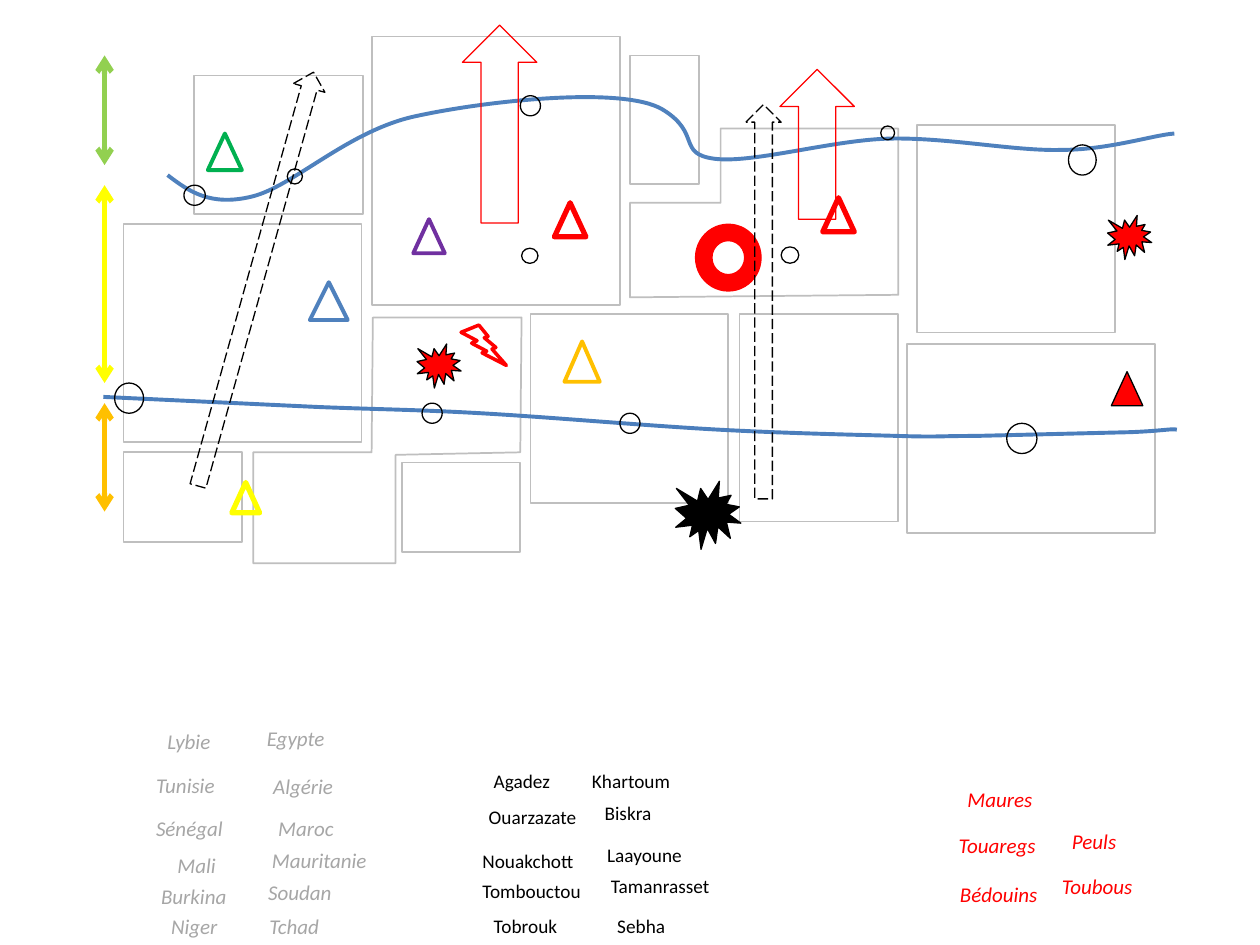
from pptx import Presentation
from pptx.dml.color import RGBColor
from pptx.enum import dml, shapes, text
from pptx.oxml.ns import qn
from pptx.util import Cm, Pt
from lxml import etree

GREY = RGBColor(0xBF, 0xBF, 0xBF)
ASH = RGBColor(0xA6, 0xA6, 0xA6)
RED = RGBColor(0xFF, 0, 0)
BLACK = RGBColor(0, 0, 0)
BLUE = RGBColor(0x4F, 0x81, 0xBD)
STEEL = RGBColor(0x4B, 0x7E, 0xBC)
GOLD = RGBColor(0xFF, 0xC0, 0)
YELLOW = RGBColor(0xFF, 0xFF, 0)
LIME = RGBColor(0x92, 0xD0, 0x50)
GREEN = RGBColor(0, 0xB0, 0x50)
PURPLE = RGBColor(0x70, 0x30, 0xA0)

UNIT = 2.54  # cm in one map unit; every place below is in map units
KIND = shapes.MSO_SHAPE

# left, top, width, height
LANDS = [
    (1.54, 0.6, 1.34, 1.1), (2.95, 0.29, 1.97, 2.13), (5, 0.44, 0.55, 1.02),
    (7.28, 0.99, 1.57, 1.65), (7.2, 2.73, 1.97, 1.5), (0.98, 1.78, 1.89, 1.73),
    (4.21, 2.49, 1.57, 1.5), (0.98, 3.59, 0.94, 0.71), (3.19, 3.67, 0.94, 0.71),
    (5.87, 2.49, 1.26, 1.65),
]
# corners
BENT = [
    [(5, 1.61), (5.72, 1.61), (5.72, 1.02), (7.13, 1.02), (7.13, 2.34), (5, 2.36)],
    [(2.01, 3.59), (2.01, 4.47), (3.14, 4.47), (3.14, 3.61), (4.13, 3.59),
     (4.14, 2.52), (2.96, 2.52), (2.95, 3.59)],
]
# box, colour, then steps: start, and per step an end point (straight)
# or two handles and an end point
BELTS = [
    ((1.33, 0.77, 7.99, 0.81), BLUE, [
        (1.33, 1.39), (1.5, 1.52, 1.67, 1.64, 2, 1.56), (2.33, 1.48, 2.77, 1.03, 3.31, 0.92),
        (3.86, 0.8, 4.95, 0.68, 5.26, 0.87), (5.57, 1.06, 5.37, 1.22, 5.67, 1.26),
        (5.97, 1.3, 6.61, 1.11, 7.06, 1.1), (7.52, 1.09, 8.05, 1.2, 8.42, 1.19),
        (8.8, 1.19, 9.16, 1.07, 9.32, 1.06)]),
    ((0.82, 3.15, 8.52, 0.32), STEEL, [
        (0.82, 3.15), (2.52, 3.23), (3.02, 3.25, 3.29, 3.25, 3.82, 3.28),
        (4.35, 3.31, 5.15, 3.38, 5.7, 3.41), (6.26, 3.44, 6.79, 3.45, 7.13, 3.46),
        (7.47, 3.47, 7.43, 3.46, 7.74, 3.46), (8.97, 3.43),
        (9.23, 3.42, 9.3, 3.4, 9.34, 3.41)]),
]
# top, bottom, colour
ZONES = [(3.2, 4.06, GOLD), (1.47, 3.04, YELLOW), (0.44, 1.31, LIME)]
ZONE_X = 0.83
TOWNS = [
    (0.91, 3.04, 0.23, 0.24), (3.35, 3.2, 0.16, 0.16), (4.92, 3.28, 0.16, 0.16),
    (7.99, 3.36, 0.24, 0.24), (1.46, 1.47, 0.17, 0.16), (2.28, 1.34, 0.12, 0.12),
    (4.13, 0.76, 0.16, 0.16), (6.99, 1, 0.11, 0.11), (8.48, 1.15, 0.22, 0.24),
    (4.14, 1.97, 0.13, 0.12), (6.2, 1.96, 0.14, 0.13),
]
# kind, box, format
SIGNS = [
    (KIND.ISOSCELES_TRIANGLE, (4.48, 2.71, 0.28, 0.32), dict(line=GOLD, width=2.25)),
    (KIND.ISOSCELES_TRIANGLE, (3.28, 1.74, 0.25, 0.27), dict(line=PURPLE, width=2.25)),
    (KIND.ISOSCELES_TRIANGLE, (4.4, 1.61, 0.25, 0.27), dict(line=RED, width=3)),
    (KIND.ISOSCELES_TRIANGLE, (6.53, 1.57, 0.25, 0.27), dict(line=RED, width=3)),
    (KIND.ISOSCELES_TRIANGLE, (8.82, 2.95, 0.25, 0.27), dict(line=BLACK, fill=RED)),
    (KIND.ISOSCELES_TRIANGLE, (2.46, 2.24, 0.3, 0.3), dict(line=BLUE, width=2.25)),
    (KIND.ISOSCELES_TRIANGLE, (1.65, 1.06, 0.27, 0.29), dict(line=GREEN, width=2.25)),
    (KIND.ISOSCELES_TRIANGLE, (1.84, 3.83, 0.22, 0.24), dict(line=YELLOW, width=3)),
    (KIND.UP_ARROW, (3.67, 0.2, 0.59, 1.57), dict(line=RED)),
    (KIND.UP_ARROW, (6.19, 0.55, 0.59, 1.19), dict(line=RED)),
    (KIND.EXPLOSION1, (8.79, 1.71, 0.35, 0.35), dict(line=BLACK, fill=RED)),
    (KIND.EXPLOSION1, (3.31, 2.73, 0.35, 0.35), dict(line=BLACK, fill=RED)),
    (KIND.EXPLOSION1, (5.36, 3.82, 0.52, 0.54), dict(line=BLACK, fill=BLACK)),
    (KIND.DONUT, (5.52, 1.78, 0.52, 0.53), dict(line=RED, fill=RED)),
    (KIND.UP_ARROW, (1.9, 0.51, 0.26, 3.41), dict(line=BLACK, dash=True, turn=15.6)),
    (KIND.UP_ARROW, (5.92, 0.83, 0.28, 3.13), dict(line=BLACK, dash=True)),
    (KIND.LIGHTNING_BOLT, (3.66, 2.58, 0.36, 0.32), dict(line=RED, width=2)),
]
# name, left, top, width
STATES = [
    ("Maroc", 2.11, 6.42, 0.64), ("Tunisie", 1.14, 6.08, 0.67),
    ("Lybie", 1.23, 5.73, 0.55), ("Mauritanie", 2.06, 6.68, 0.96),
    ("Sénégal", 1.14, 6.42, 0.73), ("Niger", 1.26, 7.2, 0.57),
    ("Tchad", 2.04, 7.2, 0.6), ("Egypte", 2.02, 5.71, 0.66),
    ("Mali", 1.31, 6.72, 0.51), ("Soudan", 2.03, 6.93, 0.71),
    ("Burkina", 1.18, 6.96, 0.72), ("Algérie", 2.07, 6.09, 0.68),
]
PEOPLES = [
    ("Peuls", 8.41, 6.53, 0.56), ("Touaregs", 7.51, 6.56, 0.82),
    ("Bédouins", 7.52, 6.95, 0.82), ("Maures", 7.58, 6.19, 0.72),
    ("Toubous", 8.33, 6.88, 0.76),
]
CITIES = [
    ("Biskra", 4.7, 6.31, 0.58), ("Ouarzazate", 3.78, 6.34, 0.91),
    ("Laayoune", 4.72, 6.64, 0.8), ("Tobrouk", 3.82, 7.21, 0.72),
    ("Nouakchott", 3.73, 6.69, 0.93), ("Tombouctou", 3.73, 6.93, 1),
    ("Agadez", 3.82, 6.06, 0.66), ("Khartoum", 4.6, 6.06, 0.83),
    ("Tamanrasset", 4.75, 6.89, 1), ("Sebha", 4.8, 7.21, 0.58),
]
SLANT = dict(name="Calibri", size=Pt(12), italic=True)
PLAIN = dict(name="Calibri", size=Pt(11))

deck = Presentation()
deck.slide_width, deck.slide_height = Cm(25.4), Cm(19.05)
page = deck.slides.add_slide(deck.slide_layouts[6]).shapes


def scale(vals):
    return [Cm(v * UNIT) for v in vals]


def style(shape, line, width=0.75, fill=None, dash=False, turn=0):
    shape.shadow.inherit = False
    shape.line.color.rgb = line
    shape.line.width = Pt(width)
    if dash:
        shape.line.dash_style = dml.MSO_LINE.LONG_DASH
    if fill is None:
        shape.fill.background()
    else:
        shape.fill.solid()
        shape.fill.fore_color.rgb = fill
    shape.rotation = turn


def sign(kind, box, **fmt):
    style(page.add_shape(kind, *scale(box)), **fmt)


def trace(dots, close=True):
    first, *rest = [scale(dot) for dot in dots]
    pen = page.build_freeform(*first)
    pen.add_line_segments(rest, close=close)
    return pen.convert_to_shape()


def curve(box, steps):
    """Span the box with a freeform, then give it straight and cubic steps."""
    left, top, wide, high = box
    shape = trace([(left, top), (left + wide, top + high)], close=False)
    track = shape._element.find(".//" + qn("a:path"))
    for old in list(track):
        track.remove(old)
    for i, step in enumerate(steps):
        tag = "a:moveTo" if i == 0 else "a:lnTo" if len(step) == 2 else "a:cubicBezTo"
        node = etree.SubElement(track, qn(tag))
        for x, y in zip(step[::2], step[1::2]):
            x, y = scale((x - left, y - top))
            etree.SubElement(node, qn("a:pt"), x=str(int(x)), y=str(int(y)))
    return shape


def label(rows, high, hue, font):
    for name, left, top, wide in rows:
        frame = page.add_textbox(*scale((left, top, wide, high))).text_frame
        frame.word_wrap = False
        frame.auto_size = text.MSO_AUTO_SIZE.SHAPE_TO_FIT_TEXT
        run = frame.paragraphs[0].add_run()
        run.text = name
        run.font.color.rgb = hue
        for key, val in font.items():
            setattr(run.font, key, val)


for box in LANDS:
    sign(KIND.RECTANGLE, box, line=GREY, width=1)
for dots in BENT:
    style(trace(dots), line=GREY, width=1)
label(STATES, 0.3, ASH, SLANT)
for box, hue, steps in BELTS:
    style(curve(box, steps), line=hue, width=2.25)

for top, low, hue in ZONES:
    bar = page.add_connector(shapes.MSO_CONNECTOR.STRAIGHT, *scale((ZONE_X, top, ZONE_X, low)))
    bar.line.color.rgb = hue
    bar.line.width = Pt(3)
    for tag in ("a:headEnd", "a:tailEnd"):
        etree.SubElement(bar.get_or_add_ln(), qn(tag), type="arrow")
    etree.SubElement(bar._element.spPr, qn("a:effectLst"))

label(PEOPLES, 0.3, RED, SLANT)
for box in TOWNS:
    sign(KIND.OVAL, box, line=BLACK)
label(CITIES, 0.29, BLACK, PLAIN)
for kind, box, fmt in SIGNS:
    sign(kind, box, **fmt)

deck.save("out.pptx")
